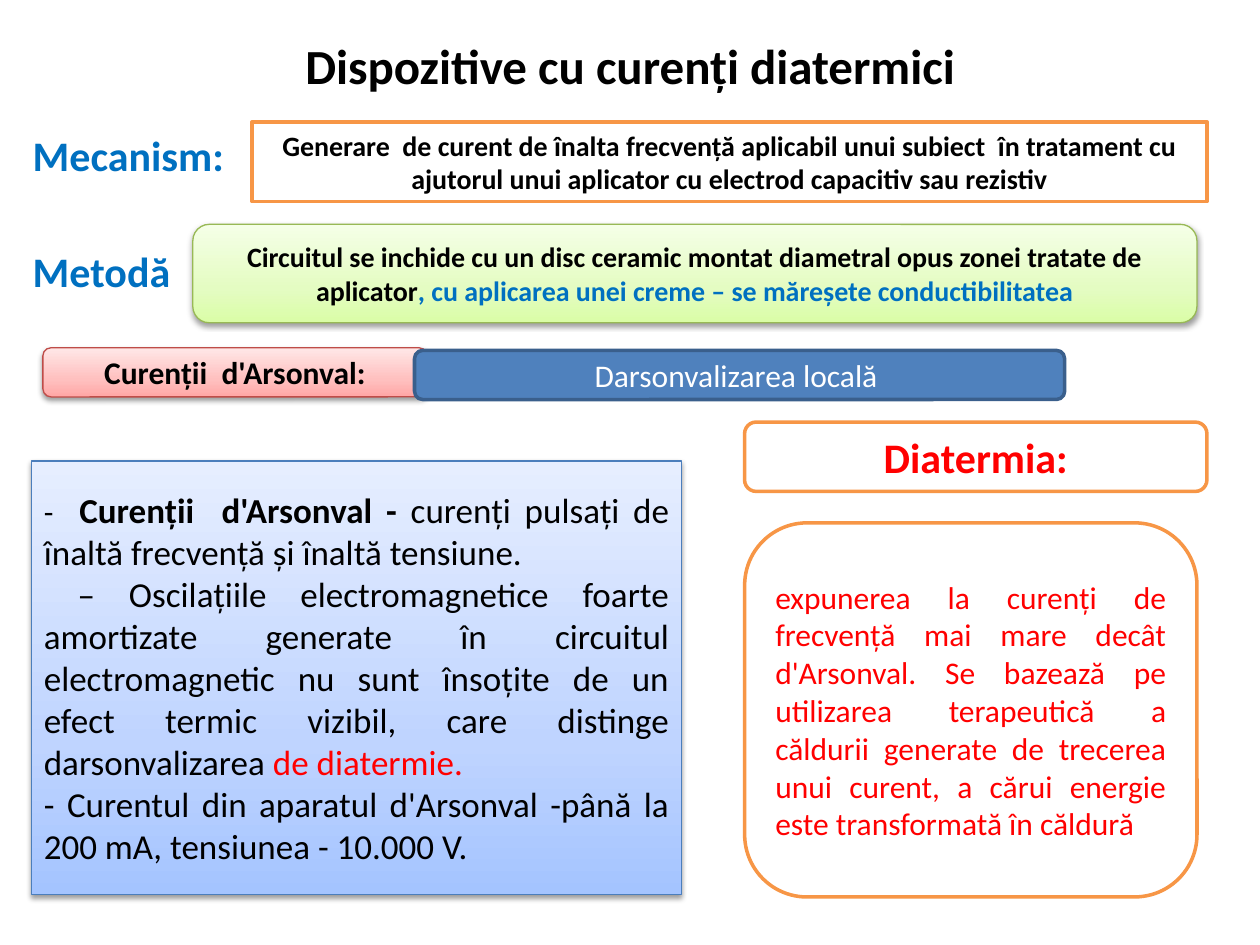
from dataclasses import dataclass

from lxml.etree import SubElement
from pptx import Presentation
from pptx.dml.color import RGBColor as RGB
from pptx.enum.shapes import MSO_SHAPE as SHAPE
from pptx.enum.text import MSO_ANCHOR as ANCHOR, MSO_AUTO_SIZE as AUTO, PP_ALIGN as ALIGN
from pptx.oxml.ns import qn
from pptx.util import Pt


@dataclass(frozen=True)
class Theme:
    font: str = "Calibri"
    black: str = "000000"
    white: str = "FFFFFF"
    blue: str = "0070C0"
    red: str = "FF0000"
    orange: str = "F79646"
    steel: str = "4F81BD"
    steel_line: str = "3A5F8C"
    green_line: str = "98B955"
    rose_line: str = "BF4C48"
    sky_line: str = "4B7EBC"
    green: tuple = ("DAFDA7", "E4FCC2", "F5FFE7")
    rose: tuple = ("FFA6A5", "FFC0BF", "FFE7E7")
    sky: tuple = ("A4C4FF", "BFD4FF", "E6EEFF")
    title: int = 28
    heading: int = 24
    text: int = 20
    label: int = 18
    note: int = 16


T = Theme()


def write(tf, paragraphs, align):
    tf.word_wrap = True
    for i, runs in enumerate(paragraphs):
        p = tf.paragraphs[0] if i == 0 else tf.add_paragraph()
        p.alignment = align
        for text, size, color, bold in runs:
            r = p.add_run()
            r.text = text
            r.font.name = T.font
            r.font.size = Pt(size)
            r.font.bold = bold
            r.font.color.rgb = RGB.from_string(color)


def shade(sp, colors):
    sp.fill.gradient()
    sp.fill.gradient_angle = 90
    stops = sp._element.spPr.find(qn("a:gradFill")).find(qn("a:gsLst"))
    for stop in list(stops):
        stops.remove(stop)
    for position, color in zip((0, 35000, 100000), colors):
        stop = SubElement(stops, qn("a:gs"), pos=str(position))
        SubElement(stop, qn("a:srgbClr"), val=color)
    effects = sp._element.spPr.find(qn("a:effectLst"))
    shadow = SubElement(effects, qn("a:outerShdw"), blurRad=str(Pt(3.1)),
                        dist=str(Pt(1.6)), dir="5400000", rotWithShape="0")
    color = SubElement(shadow, qn("a:srgbClr"), val=T.black)
    SubElement(color, qn("a:alpha"), val="38000")


prs = Presentation()
prs.slide_width, prs.slide_height = Pt(720), Pt(540)
s = prs.slides.add_slide(prs.slide_layouts[1])

title, body = s.placeholders
title.left, title.top, title.width, title.height = Pt(36), Pt(21.6), Pt(648), Pt(40.3)
body.left, body.top, body.width, body.height = Pt(11.5), Pt(70.6), Pt(686), Pt(452)
write(title.text_frame, [[("Dispozitive cu curenți diatermici", T.title, T.black, True)]], ALIGN.CENTER)
title.text_frame.vertical_anchor = ANCHOR.MIDDLE
title.text_frame.margin_top, title.text_frame.margin_bottom = Pt(0), Pt(9)
write(body.text_frame, [[(word, T.heading, T.blue, True)] for word in ("Mecanism:", "Metodă")], ALIGN.LEFT)
for sp in (title, body):
    sp.text_frame.auto_size = AUTO.NONE
for p, gap in zip(body.text_frame.paragraphs, (0, 37.5)):
    p.space_before = Pt(gap)
    pPr = p._p.get_or_add_pPr()
    pPr.set("marL", "0")
    pPr.set("indent", "0")
    SubElement(pPr, qn("a:buNone"))

boxes = [
    (SHAPE.RECTANGLE, (144, 69.8, 545.8, 45.4), T.white, T.orange, 2, ALIGN.CENTER, [
        [("Generare  de curent de înalta frecvență aplicabil unui subiect  în tratament cu "
          "ajutorul unui aplicator cu electrod capacitiv sau rezistiv", T.note, T.black, True)]]),
    (SHAPE.ROUNDED_RECTANGLE, (110.2, 128.2, 573.8, 56.2), T.green, T.green_line, 0.75, ALIGN.CENTER, [
        [("Circuitul se inchide cu un disc ceramic montat diametral opus zonei tratate de aplicator",
          T.note, T.black, True),
         (", cu aplicarea unei creme – se măreșete conductibilitatea", T.note, T.blue, True)]]),
    (SHAPE.ROUNDED_RECTANGLE, (24.5, 198.7, 219.6, 28.1), T.rose, T.rose_line, 0.75, ALIGN.CENTER, [
        [("Curenții  d'Arsonval:", T.label, T.black, True)]]),
    (SHAPE.RECTANGLE, (18, 263.5, 371.5, 247.7), T.sky, T.sky_line, 0.75, ALIGN.JUSTIFY, [
        [("-  ", T.label, T.black, False),
         ("Curenții  d'Arsonval - ", T.text, T.black, True),
         ("curenți pulsați de înaltă frecvență și înaltă tensiune.", T.text, T.black, False)],
        [(" – Oscilațiile electromagnetice foarte amortizate generate în circuitul electromagnetic "
          "nu sunt însoțite de un efect termic vizibil, care distinge darsonvalizarea ",
          T.text, T.black, False),
         ("de diatermie. ", T.text, T.red, False)],
        [("- Curentul din aparatul d'Arsonval -până la 200 mA, tensiunea - 10.000 V.",
          T.text, T.black, False)]]),
    (SHAPE.ROUNDED_RECTANGLE, (236.9, 200.2, 371.5, 28.1), T.steel, T.steel_line, 2, ALIGN.CENTER, [
        [("Darsonvalizarea locală ", T.label, T.white, False)]]),
    (SHAPE.ROUNDED_RECTANGLE, (425.5, 241.2, 264.2, 39.6), T.white, T.orange, 2, ALIGN.CENTER, [
        [("Diatermia:", T.heading, T.red, True)]]),
    (SHAPE.ROUNDED_RECTANGLE, (425.5, 298.8, 258.5, 213.8), T.white, T.orange, 2, ALIGN.JUSTIFY, [
        [("expunerea la curenți de frecvență mai mare decât d'Arsonval. Se bazează pe utilizarea "
          "terapeutică a căldurii generate de trecerea unui curent, a cărui energie este "
          "transformată în căldură", T.label, T.red, False)]]),
]
for kind, place, fill, line, weight, align, paragraphs in boxes:
    sp = s.shapes.add_shape(kind, *map(Pt, place))
    sp.shadow.inherit = False
    if isinstance(fill, tuple):
        shade(sp, fill)
    else:
        sp.fill.solid()
        sp.fill.fore_color.rgb = RGB.from_string(fill)
    sp.line.color.rgb = RGB.from_string(line)
    sp.line.width = Pt(weight)
    sp.text_frame.vertical_anchor = ANCHOR.MIDDLE
    write(sp.text_frame, paragraphs, align)

prs.save("out.pptx")
